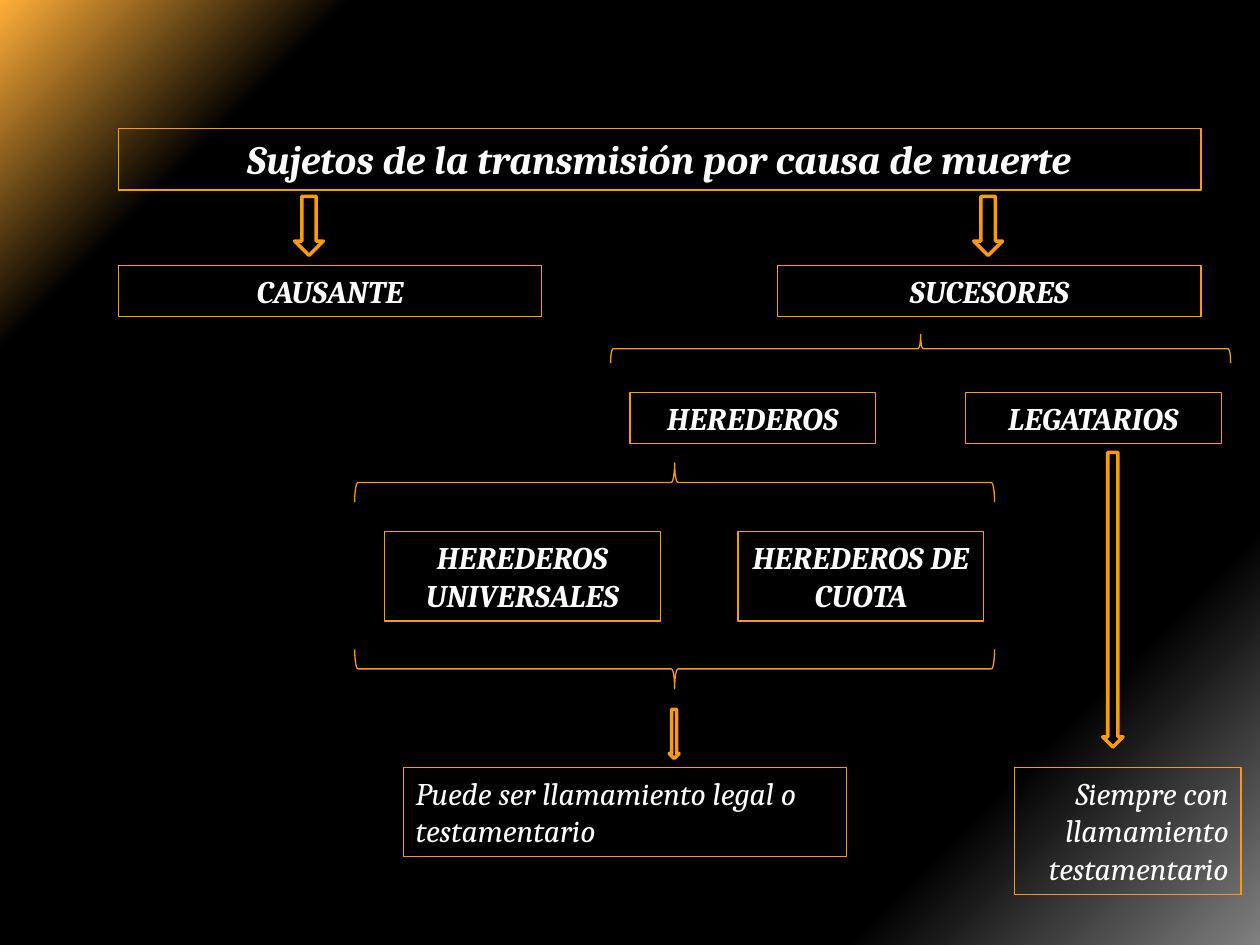
from collections import namedtuple

from lxml import etree
from pptx import Presentation
from pptx import util as u
from pptx.dml.color import RGBColor
from pptx.enum import shapes, text
from pptx.oxml import ns

COLORS = {"line": "F99A0F", "text": "FFFFFF", "arrow": "000000"}
# position %, colour, opacity %
BACKGROUND = [(0, "FFAF39", 100), (16, "000000", 75), (47, "000000", 100),
              (81, "000000", 100), (100, "808080", 100)]
FONT = "Cambria"
ROW = 1.02       # height of a one-line label
TWO_ROWS = 1.8
Box = namedtuple("Box", "left top width height")


def color(name):
    return RGBColor.from_string(COLORS[name])


def within(box, left, top, width, height):
    """Box whose position is relative to the corner of another box."""
    return Box(box.left + left, box.top + top, width, height)


def paint_background(page):
    fill = page.background.fill
    fill.gradient()
    gradient = page.background._cSld.find(".//" + ns.qn("a:gradFill"))
    stops = gradient.find(ns.qn("a:gsLst"))
    for stop in list(stops):
        stops.remove(stop)
    for position, value, opacity in BACKGROUND:
        stop = etree.SubElement(stops, ns.qn("a:gs"), pos=str(position * 1000))
        tone = etree.SubElement(stop, ns.qn("a:srgbClr"), val=value)
        if opacity < 100:
            etree.SubElement(tone, ns.qn("a:alpha"), val=str(opacity * 1000))
    direction = gradient.find(ns.qn("a:lin"))
    direction.set("ang", str(45 * 60000))
    direction.set("scaled", "0")


def outline(shape, points):
    shape.line.color.rgb = color("line")
    shape.line.width = u.Pt(points)


def add_label(page, box, words, size=18, bold=True, align=text.PP_ALIGN.CENTER):
    label = page.shapes.add_textbox(*map(u.Cm, box))
    outline(label, 0.75)
    frame = label.text_frame
    frame.word_wrap = True
    frame.auto_size = text.MSO_AUTO_SIZE.SHAPE_TO_FIT_TEXT
    para = frame.paragraphs[0]
    para.text = words
    para.alignment = align
    font = para.font
    font.name, font.size = FONT, u.Pt(size)
    font.bold, font.italic = bold, True
    font.color.rgb = color("text")


def add_arrow(page, box):
    arrow = page.shapes.add_shape(shapes.MSO_SHAPE.DOWN_ARROW, *map(u.Cm, box))
    arrow.shadow.inherit = False
    arrow.fill.solid()
    arrow.fill.fore_color.rgb = color("arrow")
    outline(arrow, 2)


def add_brace(page, box, rotation):
    """Right brace turned to lie across the box: 270 points up, 90 down."""
    left = box.left + (box.width - box.height) / 2
    top = box.top + (box.height - box.width) / 2
    brace = page.shapes.add_shape(
        shapes.MSO_SHAPE.RIGHT_BRACE,
        *map(u.Cm, (left, top, box.height, box.width)))
    brace.rotation = rotation
    brace.shadow.inherit = False
    brace.fill.background()
    outline(brace, 0.75)


def draw_subjects(page, box):
    add_label(page, within(box, 0, 0, box.width, 1.24),
              "Sujetos de la transmisión por causa de muerte", size=23)
    label_width = 8.53
    columns = [("CAUSANTE", 0, 3.55),
               ("SUCESORES", box.width - label_width, 17.24)]
    for words, left, arrow_left in columns:
        add_label(page, within(box, left, 2.77, label_width, ROW), words)
        add_arrow(page, within(box, arrow_left, 1.37, 0.58, 1.19))


def draw_successors(page, box):
    add_brace(page, within(box, 0, 0, box.width, 0.58), 270)
    for words, left, width in [("HEREDEROS", 0.39, 4.95),
                               ("LEGATARIOS", 7.15, 5.16)]:
        add_label(page, within(box, left, 1.18, width, ROW), words)


def draw_heirs(page, box):
    for top, rotation in [(0, 270), (3.76, 90)]:
        add_brace(page, within(box, 0, top, box.width, 0.79), rotation)
    for words, left, width in [("HEREDEROS UNIVERSALES", 0.6, 5.56),
                               ("HEREDEROS DE CUOTA", 7.73, 4.95)]:
        add_label(page, within(box, left, 1.39, width, TWO_ROWS), words)
    add_arrow(page, within(box, 6.34, 4.97, 0.2, 0.99))
    add_label(page, within(box, 0.98, 6.14, 8.94, TWO_ROWS),
              "Puede ser llamamiento legal o testamentario",
              bold=False, align=text.PP_ALIGN.LEFT)


def draw_legatees(page, box):
    add_arrow(page, within(box, 1.78, 0, 0.41, 5.94))
    add_label(page, within(box, 0, 6.35, box.width, 2.57),
              "Siempre con llamamiento testamentario",
              bold=False, align=text.PP_ALIGN.RIGHT)


def main():
    deck = Presentation()
    deck.slide_width, deck.slide_height = u.Cm(25.4), u.Cm(19.05)
    page = deck.slides.add_slide(deck.slide_layouts[6])
    paint_background(page)
    draw_subjects(page, Box(2.39, 2.59, 21.82, 3.79))
    draw_successors(page, Box(12.31, 6.74, 12.5, 2.2))
    draw_heirs(page, Box(7.15, 9.33, 12.9, 7.94))
    draw_legatees(page, Box(20.45, 9.12, 4.57, 8.92))
    deck.save("out.pptx")


if __name__ == "__main__":
    main()
